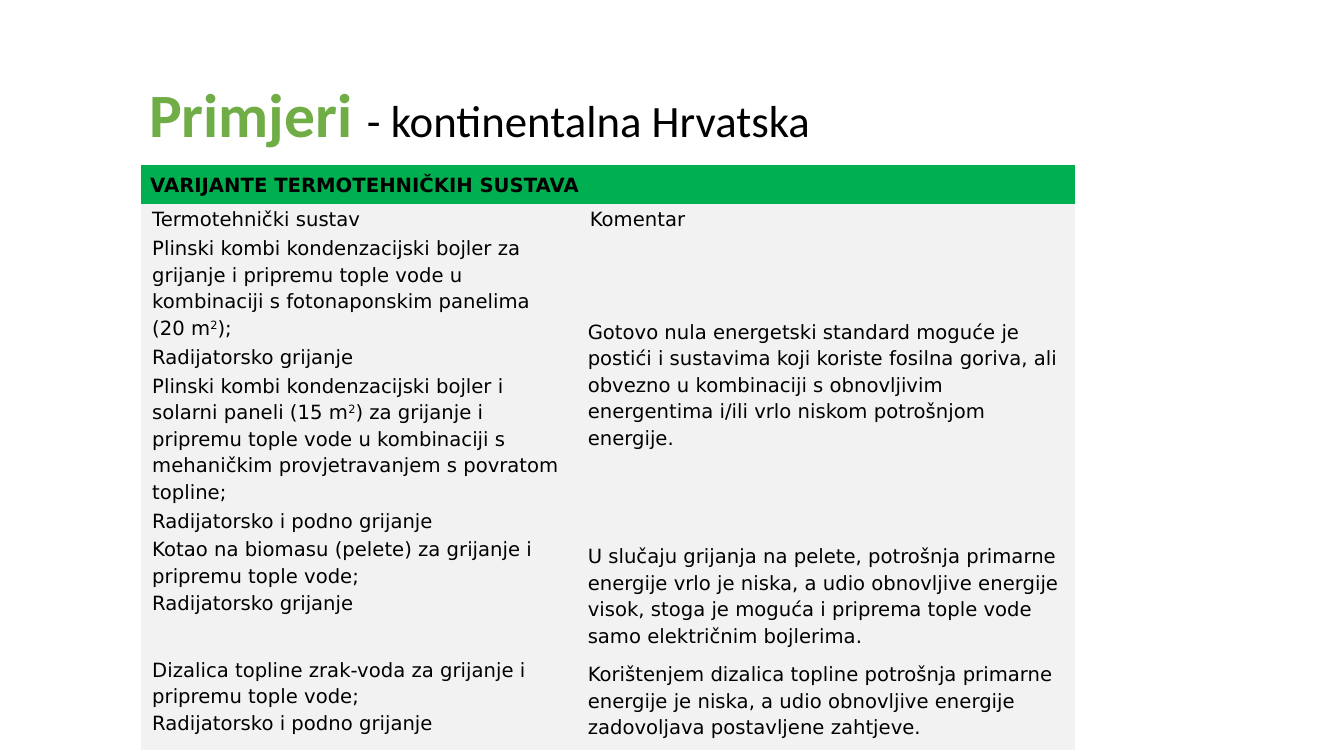
from dataclasses import dataclass

from pptx import Presentation
from pptx.dml.color import RGBColor
from pptx.enum.text import MSO_ANCHOR
from pptx.oxml.ns import qn
from pptx.slide import Slide
from pptx.table import Table
from pptx.util import Inches, Pt

TOP = MSO_ANCHOR.TOP
MIDDLE = MSO_ANCHOR.MIDDLE

COLOURS = {
    "title": "70AD47",
    "text": "000000",
    "header": "00B050",
    "body": "F2F2F2",
}
TITLE_FONT = "Calibri"
TABLE_FONT = "DejaVu Sans"
NO_STYLE_NO_GRID = "{2D5ABB26-0587-4C30-8999-92F81FD0307C}"

COLUMN_WIDTHS = [4.34, 4.92]
ROW_HEIGHTS = [0.38, 0.29, 1.02, 0.29, 1.28, 0.29, 0.5, 0.66, 0.5, 0.4]


@dataclass
class CellText:
    """Text of one cell; parts between ^ marks are superscript."""
    row: int
    column: int
    text: str
    row_span: int = 1
    column_span: int = 1
    anchor: MSO_ANCHOR = MIDDLE
    side_margin: float = 0.11
    end_margin: float = 0
    bold: bool = False


def wide_cell(row: int, column: int, text: str, **options) -> CellText:
    """A merged cell, which has the roomier margins."""
    return CellText(row, column, text, side_margin=0.09, end_margin=0.05, **options)


CELLS = [
    wide_cell(0, 0, "VARIJANTE TERMOTEHNIČKIH SUSTAVA", column_span=2, bold=True),
    CellText(1, 0, "Termotehnički sustav"),
    CellText(1, 1, "Komentar"),
    CellText(2, 0, "Plinski kombi kondenzacijski bojler za grijanje i pripremu tople vode "
                   "u kombinaciji s fotonaponskim panelima (20 m^2^);"),
    wide_cell(2, 1, "Gotovo nula energetski standard moguće je postići i sustavima koji "
                    "koriste fosilna goriva, ali obvezno u kombinaciji s obnovljivim "
                    "energentima i/ili vrlo niskom potrošnjom energije.", row_span=4),
    CellText(3, 0, "Radijatorsko grijanje"),
    CellText(4, 0, "Plinski kombi kondenzacijski bojler i solarni paneli (15 m^2^) za "
                   "grijanje i pripremu tople vode u kombinaciji s mehaničkim "
                   "provjetravanjem s povratom topline;"),
    CellText(5, 0, "Radijatorsko i podno grijanje"),
    CellText(6, 0, "Kotao na biomasu (pelete) za grijanje i pripremu tople vode;"),
    wide_cell(6, 1, "U slučaju grijanja na pelete, potrošnja primarne energije vrlo je "
                    "niska, a udio obnovljive energije visok, stoga je moguća i priprema "
                    "tople vode samo električnim bojlerima.", row_span=2),
    CellText(7, 0, "Radijatorsko grijanje", anchor=TOP),
    CellText(8, 0, "Dizalica topline zrak-voda za grijanje i pripremu tople vode;"),
    wide_cell(8, 1, "Korištenjem dizalica topline potrošnja primarne energije je niska, a "
                    "udio obnovljive energije zadovoljava postavljene zahtjeve.",
              row_span=2, anchor=TOP),
    CellText(9, 0, "Radijatorsko i podno grijanje", anchor=TOP),
]


def colour(name: str) -> RGBColor:
    return RGBColor.from_string(COLOURS[name])


def add_title(slide: Slide) -> None:
    shape = slide.shapes.add_textbox(Inches(1.38), Inches(0.7), Inches(11.19), Inches(0.75))
    shape.text_frame.word_wrap = True
    paragraph = shape.text_frame.paragraphs[0]
    paragraph.font.name = TITLE_FONT
    for text, size, colour_name, bold in [
        ("Primjeri ", 44, "title", True),
        ("- kontinentalna Hrvatska", 32, "text", False),
    ]:
        run = paragraph.add_run()
        run.text = text
        run.font.size = Pt(size)
        run.font.bold = bold
        run.font.color.rgb = colour(colour_name)


def fill_cell(table: Table, item: CellText) -> None:
    cell = table.cell(item.row, item.column)
    if item.row_span > 1 or item.column_span > 1:
        cell.merge(table.cell(item.row + item.row_span - 1,
                              item.column + item.column_span - 1))
    cell.vertical_anchor = item.anchor
    cell.margin_left = cell.margin_right = Inches(item.side_margin)
    cell.margin_top = cell.margin_bottom = Inches(item.end_margin)

    paragraph = cell.text_frame.paragraphs[0]
    paragraph.line_spacing = 1.15
    paragraph.space_after = Pt(10)
    paragraph.font.name = TABLE_FONT
    paragraph.font.size = Pt(14)
    paragraph.font.bold = item.bold
    paragraph.font.color.rgb = colour("text")
    for index, text in enumerate(item.text.split("^")):
        run = paragraph.add_run()
        run.text = text
        if index % 2:
            run.font._element.set("baseline", "30000")


def add_systems_table(slide: Slide) -> None:
    frame = slide.shapes.add_table(
        len(ROW_HEIGHTS), len(COLUMN_WIDTHS), Inches(1.4), Inches(1.64),
        Inches(sum(COLUMN_WIDTHS)), Inches(sum(ROW_HEIGHTS)))
    for style in frame.element.iter(qn("a:tableStyleId")):
        style.text = NO_STYLE_NO_GRID
    table = frame.table
    table.horz_banding = False
    for column, width in zip(table.columns, COLUMN_WIDTHS):
        column.width = Inches(width)
    for index, (row, height) in enumerate(zip(table.rows, ROW_HEIGHTS)):
        row.height = Inches(height)
        for cell in row.cells:
            cell.margin_top = cell.margin_bottom = 0
            cell.fill.solid()
            cell.fill.fore_color.rgb = colour("body" if index else "header")
    for item in CELLS:
        fill_cell(table, item)


def main() -> None:
    presentation = Presentation()
    presentation.slide_width = Inches(13.33)
    presentation.slide_height = Inches(7.5)
    slide = presentation.slides.add_slide(presentation.slide_layouts[6])

    # Title
    add_title(slide)

    # Heating systems and comments
    add_systems_table(slide)

    presentation.save("out.pptx")


if __name__ == "__main__":
    main()
